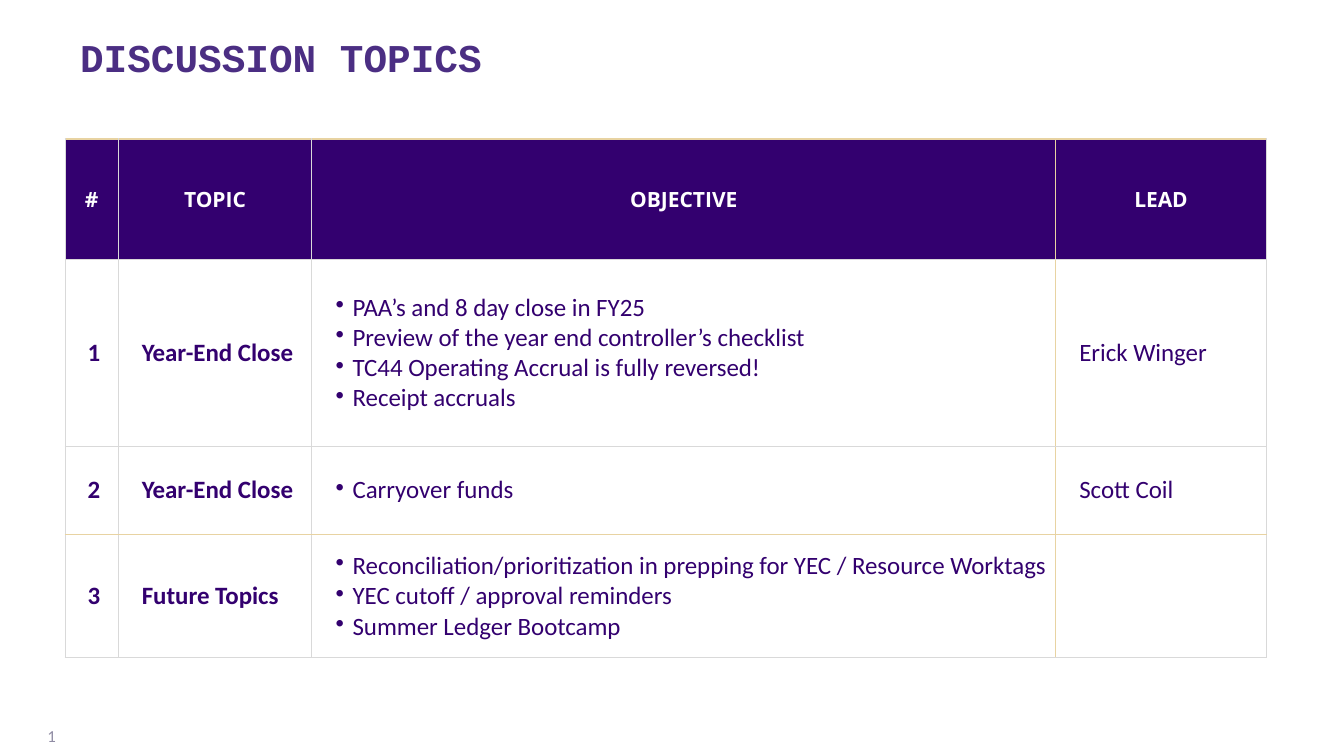
import pptx
import pptx.util
import pptx.dml.color
import pptx.enum.text
import pptx.oxml
import pptx.oxml.ns
import lxml.etree

PURPLE, WHITE = "33006F", "FFFFFF"
GOLD, GRAY = "E8D3A2", "D9D9D9"
ALIGN = pptx.enum.text.PP_ALIGN
MIDDLE = pptx.enum.text.MSO_ANCHOR.MIDDLE
qn = pptx.oxml.ns.qn


def color(hex_string):
    return pptx.dml.color.RGBColor.from_string(hex_string)


class TopicsSlide:
    """Style and current slide; lengths are hundredths of the slide's size."""

    def __init__(self, deck):
        self.deck = deck
        self.slide = deck.slides.add_slide(deck.slide_layouts[6])

    def across(self, columns):
        return int(self.deck.slide_width * columns / 100)

    def down(self, rows):
        return int(self.deck.slide_height * rows / 100)

    def add_words(self, para, words, font, size, ink, bold=False, align=ALIGN.LEFT):
        para.alignment = align
        span = para.add_run()
        span.text = words
        span.font.name, span.font.size = font, pptx.util.Pt(size)
        span.font.bold, span.font.color.rgb = bold, color(ink)

    def indent(self, para, left, hanging=0):
        properties = para._p.get_or_add_pPr()
        properties.set("marL", str(pptx.util.Inches(left)))
        properties.set("indent", str(-pptx.util.Inches(hanging)))
        if hanging:
            bullet = lxml.etree.SubElement(properties, qn("a:buChar"))
            bullet.set("char", "•")

    def text(self, left, top, width, height, words, *style, anchor=None, spacing=None, **options):
        box = self.slide.shapes.add_textbox(
            self.across(left), self.down(top), self.across(width), self.down(height))
        box.text_frame.word_wrap = True
        box.text_frame.vertical_anchor = anchor
        para = box.text_frame.paragraphs[0]
        para.line_spacing = spacing
        self.add_words(para, words, *style, **options)

    def table(self, left, top, widths, heights):
        frame = self.slide.shapes.add_table(
            len(heights), len(widths), self.across(left), self.down(top),
            self.across(sum(widths)), self.down(sum(heights)))
        grid = frame.table
        for column, width in zip(grid.columns, widths):
            column.width = self.across(width)
        for row, height in zip(grid.rows, heights):
            row.height = self.down(height)
        return grid

    def cell(self, cell, fill, left_margin, borders):
        cell.vertical_anchor = MIDDLE
        cell.margin_left = pptx.util.Inches(left_margin)
        cell.margin_right = cell.margin_top = cell.margin_bottom = 0
        cell.fill.solid()
        cell.fill.fore_color.rgb = color(fill)
        # Border lines come before the fill in the cell properties
        for place, (side, ink) in enumerate(zip("LRTB", borders)):
            line = pptx.oxml.parse_xml(
                f'<a:ln{side} {pptx.oxml.ns.nsdecls("a")} w="{pptx.util.Pt(1)}">'
                f'<a:solidFill><a:srgbClr val="{ink}"/></a:solidFill></a:ln{side}>')
            cell._tc.get_or_add_tcPr().insert(place, line)


HEADINGS = ["#", "TOPIC", "OBJECTIVE", "LEAD"]
TOPICS = [
    ("1", "Year-End Close", [
        "PAA’s and 8 day close in FY25",
        "Preview of the year end controller’s checklist",
        "TC44 Operating Accrual is fully reversed!",
        "Receipt accruals"], "Erick Winger"),
    ("2", "Year-End Close", ["Carryover funds"], "Scott Coil"),
    ("3", "Future Topics", [
        "Reconciliation/prioritization in prepping for YEC / Resource Worktags",
        "YEC cutoff / approval reminders",
        "Summer Ledger Bootcamp"], ""),
]
COLUMN_EDGES = [GRAY, GRAY, GRAY, GOLD, GRAY]
ROW_EDGES = [GOLD, GRAY, GRAY, GOLD, GRAY]


def main():
    deck = pptx.Presentation()
    deck.slide_width, deck.slide_height = pptx.util.Inches(14.22), pptx.util.Inches(8)
    page = TopicsSlide(deck)

    # Title and page number
    page.text(5.27, 4.5, 87.55, 6.5, "DISCUSSION TOPICS", "Courier New", 30, "4B2E83",
              bold=True, spacing=0.9)
    page.text(1.34, 94.63, 3.52, 5.37, "1", "Calibri", 12.8, "908CA4",
              align=ALIGN.RIGHT, anchor=MIDDLE)

    # Table of topics
    grid = page.table(4.85, 18.38, [3.94, 14.42, 55.34, 15.68], [16, 24.63, 11.75, 16.25])
    for r, entries in enumerate([HEADINGS, *TOPICS]):
        header = r == 0
        for c, entry in enumerate(entries):
            cell = grid.cell(r, c)
            page.cell(cell, PURPLE if header else WHITE, 0 if header else 0.05,
                      COLUMN_EDGES[c:c + 2] + ROW_EDGES[r:r + 2])
            frame = cell.text_frame
            if header:
                page.add_words(frame.paragraphs[0], entry, "Open Sans", 16, WHITE,
                               True, ALIGN.CENTER)
                continue
            bulleted = isinstance(entry, list)
            for i, words in enumerate(entry if bulleted else [entry]):
                para = frame.paragraphs[0] if i == 0 else frame.add_paragraph()
                if bulleted:
                    page.indent(para, 0.38, 0.18)
                elif c > 0:
                    page.indent(para, 0.2)
                if words:
                    page.add_words(para, words, "Calibri", 19, PURPLE, c < 2,
                                   ALIGN.CENTER if c == 0 else ALIGN.LEFT)

    deck.save("out.pptx")


if __name__ == "__main__":
    main()
